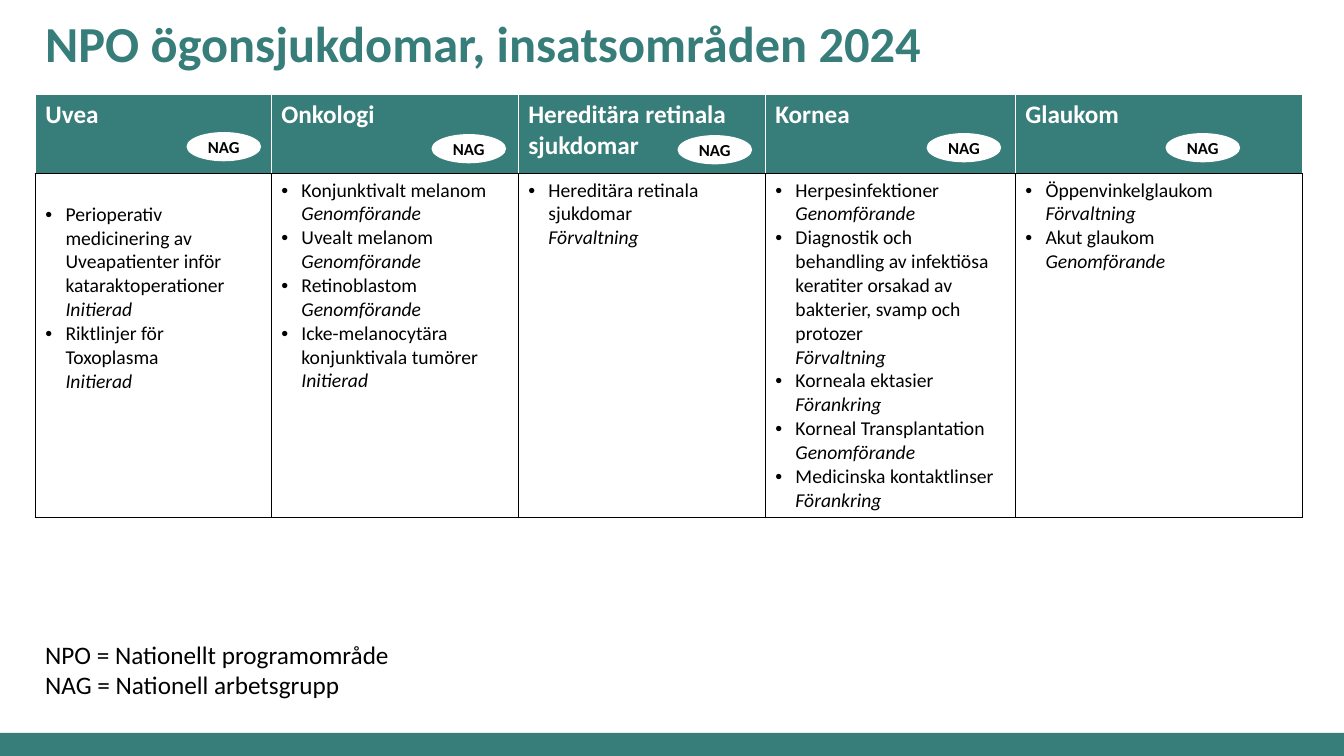
"""Build the slide on NPO eye diseases and their focus areas for 2024."""
import pptx
import pptx.util
import pptx.dml.color
import pptx.enum.shapes
import pptx.enum.text
import pptx.oxml
import pptx.oxml.ns
from lxml import etree

Inches, Pt = pptx.util.Inches, pptx.util.Pt
ANCHOR = pptx.enum.text.MSO_ANCHOR
TEAL, WHITE, BLACK = "377D7A", "FFFFFF", "000000"
FONT = "Calibri"
COLUMN_WIDTHS = [2.34, 2.45, 2.45, 2.48, 2.85]
AREAS = [
    ("Uvea", [
        ("Perioperativ medicinering av Uveapatienter inför kataraktoperationer", "\n", "Initierad"),
        ("Riktlinjer för Toxoplasma ", "\n", "Initierad")]),
    ("Onkologi", [
        ("Konjunktivalt melanom", "\n", "Genomförande"),
        ("Uvealt melanom", "\n", "Genomförande"),
        ("Retinoblastom", "\n", "Genomförande"),
        ("Icke-melanocytära konjunktivala tumörer", "\n", "Initierad")]),
    ("Hereditära retinala sjukdomar", [
        ("Hereditära retinala sjukdomar", "\n", "Förvaltning")]),
    ("Kornea", [
        ("Herpesinfektioner", "\n", "Genomförande"),
        ("Diagnostik och behandling av infektiösa keratiter orsakad av "
         "bakterier, svamp och protozer", "\n", "Förvaltning"),
        ("Korneala ektasier", "\n", "Förankring"),
        ("Korneal Transplantation", "\n", "Genomförande"),
        ("Medicinska kontaktlinser", "\n", "Förankring")]),
    ("Glaukom", [
        ("Öppenvinkelglaukom", " ", "Förvaltning"),
        ("Akut glaukom", "\n", "Genomförande")]),
]
NAG_OVALS = [(1.85, 1.31), (4.28, 1.33), (6.72, 1.34), (9.19, 1.32), (11.56, 1.32)]


def rgb(color):
    """Return the colour of a hex string."""
    return pptx.dml.color.RGBColor.from_string(color)


def add_run(p, text, size, color=BLACK, bold=False, italic=False):
    """Add one formatted run to a paragraph."""
    r = p.add_run()
    r.text = text
    r.font.name, r.font.size = FONT, Pt(size)
    r.font.bold, r.font.italic = bold, italic
    r.font.color.rgb = rgb(color)


def add_break(p, size):
    """Add a line break of a given text size."""
    p.add_line_break()
    etree.SubElement(p._p[-1], pptx.oxml.ns.qn("a:rPr")).set("sz", str(size * 100))


def add_text(s, box, lines, size, color=BLACK, bold=False, spacing=None,
             anchor=ANCHOR.TOP, wrap=True):
    """Add a text box with one paragraph for each line."""
    tf = s.shapes.add_textbox(*map(Inches, box)).text_frame
    tf.word_wrap = wrap
    tf.vertical_anchor = anchor
    for i, line in enumerate(lines):
        p = tf.add_paragraph() if i else tf.paragraphs[0]
        p.line_spacing = spacing
        add_run(p, line, size, color, bold)


def add_filled(s, kind, box, color):
    """Add a flat shape without outline."""
    sp = s.shapes.add_shape(kind, *map(Inches, box))
    sp.shadow.inherit = False
    sp.fill.solid()
    sp.fill.fore_color.rgb = rgb(color)
    sp.line.fill.background()
    return sp


def add_nag_oval(s, left, top):
    """Add the white oval that marks a national working group."""
    sp = add_filled(s, pptx.enum.shapes.MSO_SHAPE.OVAL, (left, top, 0.74, 0.29), WHITE)
    tf = sp.text_frame
    tf.margin_left = tf.margin_right = tf.margin_top = tf.margin_bottom = 0
    tf.vertical_anchor = ANCHOR.MIDDLE
    p = tf.paragraphs[0]
    p.alignment = pptx.enum.text.PP_ALIGN.CENTER
    add_run(p, "NAG", 12, bold=True)


def set_borders(cell, left, right, top, bottom):
    """Give the four sides of a cell solid lines of 1 pt."""
    tc_pr = cell._tc.get_or_add_tcPr()
    for side, color in zip("LRTB", (left, right, top, bottom)):
        tc_pr.append(pptx.oxml.parse_xml(
            f'<a:ln{side} {pptx.oxml.ns.nsdecls("a")} w="12700"><a:solidFill>'
            f'<a:srgbClr val="{color}"/></a:solidFill></a:ln{side}>'))


def set_bullet(p):
    """Give a paragraph a hanging bullet."""
    p_pr = p._p.get_or_add_pPr()
    p_pr.set("marL", str(Inches(0.2)))
    p_pr.set("indent", str(Inches(-0.2)))
    etree.SubElement(p_pr, pptx.oxml.ns.qn("a:buFont")).set("typeface", "Arial")
    etree.SubElement(p_pr, pptx.oxml.ns.qn("a:buChar")).set("char", "•")


def fill_header(cell, name):
    """Write the name of an area in a teal cell."""
    set_borders(cell, WHITE, WHITE, WHITE, BLACK)
    cell.fill.solid()
    cell.fill.fore_color.rgb = rgb(TEAL)
    add_run(cell.text_frame.paragraphs[0], name, 18, WHITE, bold=True)


def fill_efforts(cell, efforts):
    """List efforts, each followed by its status in italics."""
    set_borders(cell, BLACK, BLACK, BLACK, BLACK)
    cell.fill.background()
    tf = cell.text_frame
    for i, (effort, separator, status) in enumerate(efforts):
        p = tf.add_paragraph() if i else tf.paragraphs[0]
        set_bullet(p)
        if separator == "\n":
            add_run(p, effort, 14)
            add_break(p, 14)
        else:
            add_run(p, effort + separator, 14)
        add_run(p, status, 14, italic=True)


def add_area_table(s):
    """Add the table with one column for each area."""
    table = s.shapes.add_table(2, len(AREAS), Inches(0.35), Inches(0.94),
                               Inches(sum(COLUMN_WIDTHS)), Inches(4.19)).table
    table.first_row = table.horz_banding = False
    table.rows[0].height, table.rows[1].height = Inches(0.78), Inches(3.41)
    for i, (width, (name, efforts)) in enumerate(zip(COLUMN_WIDTHS, AREAS)):
        table.columns[i].width = Inches(width)
        fill_header(table.cell(0, i), name)
        fill_efforts(table.cell(1, i), efforts)
    table.cell(1, 0).margin_top = Inches(0.29)


def main():
    """Build and save the slide."""
    prs = pptx.Presentation()
    prs.slide_width, prs.slide_height = Inches(13.33), Inches(7.5)
    s = prs.slides.add_slide(prs.slide_layouts[6])
    add_filled(s, pptx.enum.shapes.MSO_SHAPE.RECTANGLE, (0, 7.27, 13.33, 0.23), TEAL)
    add_text(s, (0.35, 0.08, 9.21, 0.7), ["NPO ögonsjukdomar, insatsområden 2024"],
             36, TEAL, bold=True, spacing=0.9, anchor=ANCHOR.BOTTOM)
    add_area_table(s)
    for left, top in NAG_OVALS:
        add_nag_oval(s, left, top)
    add_text(s, (0.35, 6.29, 3.65, 0.71),
             ["NPO = Nationellt programområde", "NAG = Nationell arbetsgrupp"], 18, wrap=False)
    prs.save("out.pptx")


if __name__ == "__main__":
    main()
